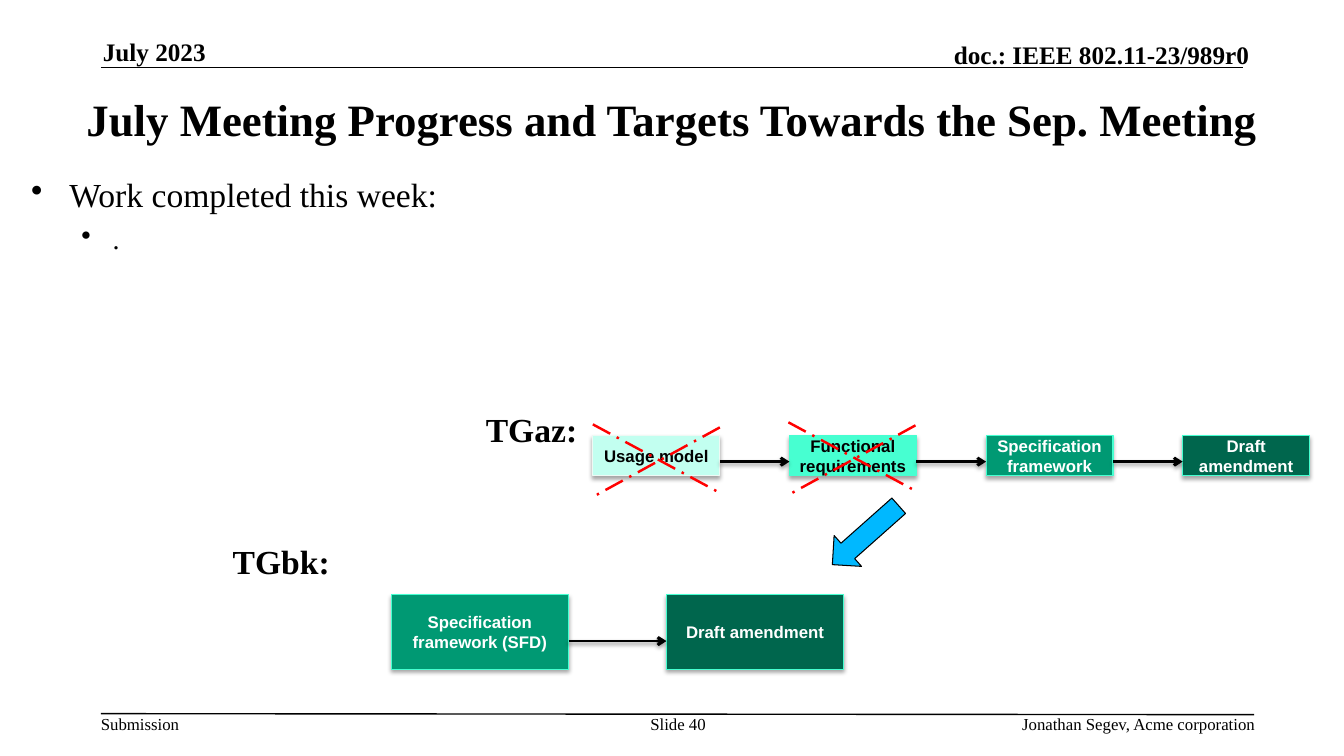
from lxml.etree import SubElement
from pptx import Presentation
from pptx.dml.color import RGBColor
from pptx.enum.dml import MSO_LINE
from pptx.enum.shapes import MSO_CONNECTOR, MSO_SHAPE
from pptx.enum.text import MSO_ANCHOR, PP_ALIGN
from pptx.oxml.ns import qn
from pptx.util import Inches, Pt

SERIF, SANS = "Times New Roman", "Arial"
BLACK, WHITE, RED, BLUE = "000000", "FFFFFF", "FF0000", "00B8FF"
PALE, MINT, GREEN, DARK = "C2FFF0", "47FFD1", "009973", "00664D"
LEFT, CENTER, RIGHT = PP_ALIGN.LEFT, PP_ALIGN.CENTER, PP_ALIGN.RIGHT
TOP, MIDDLE, BOTTOM = MSO_ANCHOR.TOP, MSO_ANCHOR.MIDDLE, MSO_ANCHOR.BOTTOM


def color(code):
    return RGBColor.from_string(code)


class MeetingSlide:
    """Draws the elements of the meeting slide in one shared style."""

    def __init__(self, slide):
        self.slide = slide
        self.shapes = slide.shapes

    def style(self, paragraph, size, bold=False, ink=BLACK, face=SERIF, align=LEFT):
        paragraph.alignment = align
        for run in paragraph.runs:
            run.font.size = Pt(size)
            run.font.bold = bold
            run.font.name = face
            run.font.color.rgb = color(ink)

    def frame(self, at, inset=True, anchor=TOP, wrap=True):
        frame = self.shapes.add_textbox(*map(Inches, at)).text_frame
        frame.word_wrap = wrap
        frame.vertical_anchor = anchor
        if not inset:
            frame.margin_left = frame.margin_right = 0
            frame.margin_top = frame.margin_bottom = 0
        return frame

    def label(self, words, at, size, bold=False, align=LEFT, **layout):
        frame = self.frame(at, **layout)
        frame.text = words
        self.style(frame.paragraphs[0], size, bold, align=align)

    def bullets(self, at, items):
        frame = self.frame(at)
        for index, (words, size, before, margin, hang) in enumerate(items):
            paragraph = frame.add_paragraph() if index else frame.paragraphs[0]
            paragraph.text = words
            paragraph.level = index
            paragraph.space_before = Pt(before)
            self.style(paragraph, size)
            properties = paragraph._p.get_or_add_pPr()
            properties.set("marL", str(Inches(margin)))
            properties.set("indent", str(-Inches(hang)))
            SubElement(properties, qn("a:buChar"), char="•")

    def shadow(self, effects, opacity, distance):
        outer = SubElement(effects, qn("a:outerShdw"), blurRad=str(Pt(3.1)),
                           dist=str(Pt(distance)), dir="5400000", rotWithShape="0")
        tint = SubElement(outer, qn("a:srgbClr"), val=BLACK)
        SubElement(tint, qn("a:alpha"), val=str(opacity * 1000))

    def shape(self, kind, at, fill, border):
        shape = self.shapes.add_shape(kind, *map(Inches, at))
        shape.fill.solid()
        shape.fill.fore_color.rgb = color(fill)
        shape.line.color.rgb = color(border)
        shape.line.width = Pt(0.75)
        shape.shadow.inherit = False
        return shape

    def stage(self, words, at, fill, border, ink):
        box = self.shape(MSO_SHAPE.RECTANGLE, at, fill, border)
        self.shadow(box._element.spPr.find(qn("a:effectLst")), 35, 1.8)
        box.text_frame.word_wrap = True
        box.text_frame.vertical_anchor = MIDDLE
        box.text_frame.text = words
        self.style(box.text_frame.paragraphs[0], 12, True, ink, SANS, CENTER)

    def line(self, start, end, ink=BLACK, width=1.0, dash=None, arrow=False):
        line = self.shapes.add_connector(
            MSO_CONNECTOR.STRAIGHT, *map(Inches, (*start, *end)))
        line.line.color.rgb = color(ink)
        line.line.width = Pt(width)
        if dash:
            line.line.dash_style = dash
        properties = line._element.spPr
        effects = SubElement(properties, qn("a:effectLst"))
        if arrow:
            SubElement(properties.find(qn("a:ln")), qn("a:tailEnd"), type="arrow")
            self.shadow(effects, 38, 1.6)

    def flow(self, stages, left, top, width, height, gap, arrow_y):
        for index, stage in enumerate(stages):
            x = left + index * (width + gap)
            self.stage(stage[0], (x, top, width, height), *stage[1:])
            if index:
                self.line((x - gap, arrow_y), (x, arrow_y), width=2, arrow=True)

    def cross(self, left, top, width):
        right = left + width
        for start, end in (((left, top), (right, top + 0.68)),
                           ((right, top + 0.03), (left, top + 0.72))):
            self.line(start, end, RED, 1.75, MSO_LINE.LONG_DASH_DOT)


def main():
    deck = Presentation()
    deck.slide_width, deck.slide_height = Inches(13.33), Inches(7.5)
    page = MeetingSlide(deck.slides.add_slide(deck.slide_layouts[6]))

    page.line((1, 0.67), (12.33, 0.67))
    page.line((1, 7.08), (12.44, 7.09))
    page.label("July 2023", (1.02, 0.36, 2.73, 0.3), 18, True,
               inset=False, anchor=BOTTOM)
    page.label("doc.: IEEE 802.11-23/989r0", (7.29, 0.39, 5.1, 0.3), 18, True, RIGHT,
               inset=False, anchor=BOTTOM)
    for words, at, align in (
            ("Submission", (1, 7.08, 0.79, 0.2), LEFT),
            ("Slide 40", (6.34, 7.08, 0.77, 0.4), CENTER),
            ("Jonathan Segev, Acme corporation", (7.81, 7.08, 4.64, 0.2), RIGHT)):
        page.label(words, at, 12, align=align, inset=False, wrap=align != LEFT)

    page.label("July Meeting Progress and Targets Towards the Sep. Meeting",
               (0.21, 0.75, 12.91, 0.85), 32, True, CENTER, anchor=MIDDLE)
    page.bullets((0.21, 1.68, 11.65, 2.7), (
        ("Work completed this week:", 24, 6, 0.38, 0.38),
        (".", 20, 5, 0.81, 0.31)))

    page.label("TGbk:", (2.21, 5.32, 2.43, 0.71), 24, True)
    page.flow((("Specification framework (SFD)", GREEN, MINT, WHITE),
               ("Draft amendment", DARK, MINT, WHITE)),
              3.88, 5.9, 1.76, 0.74, 0.97, 6.36)

    page.label("TGaz:", (4.72, 4.01, 1.74, 0.38), 24, True)
    page.flow((("Usage model", PALE, "EEF9F4", BLACK),
               ("Functional requirements", MINT, MINT, BLACK),
               ("Specification framework", GREEN, MINT, WHITE),
               ("Draft amendment", DARK, MINT, WHITE)),
              5.88, 4.32, 1.26, 0.4, 0.69, 4.58)
    page.cross(5.88, 4.21, 1.26)
    page.cross(7.82, 4.19, 1.26)

    handover = page.shape(MSO_SHAPE.DOWN_ARROW, (8.38, 4.87, 0.41, 0.88), BLUE, BLACK)
    handover.rotation = 48.4

    deck.save("out.pptx")


if __name__ == "__main__":
    main()
